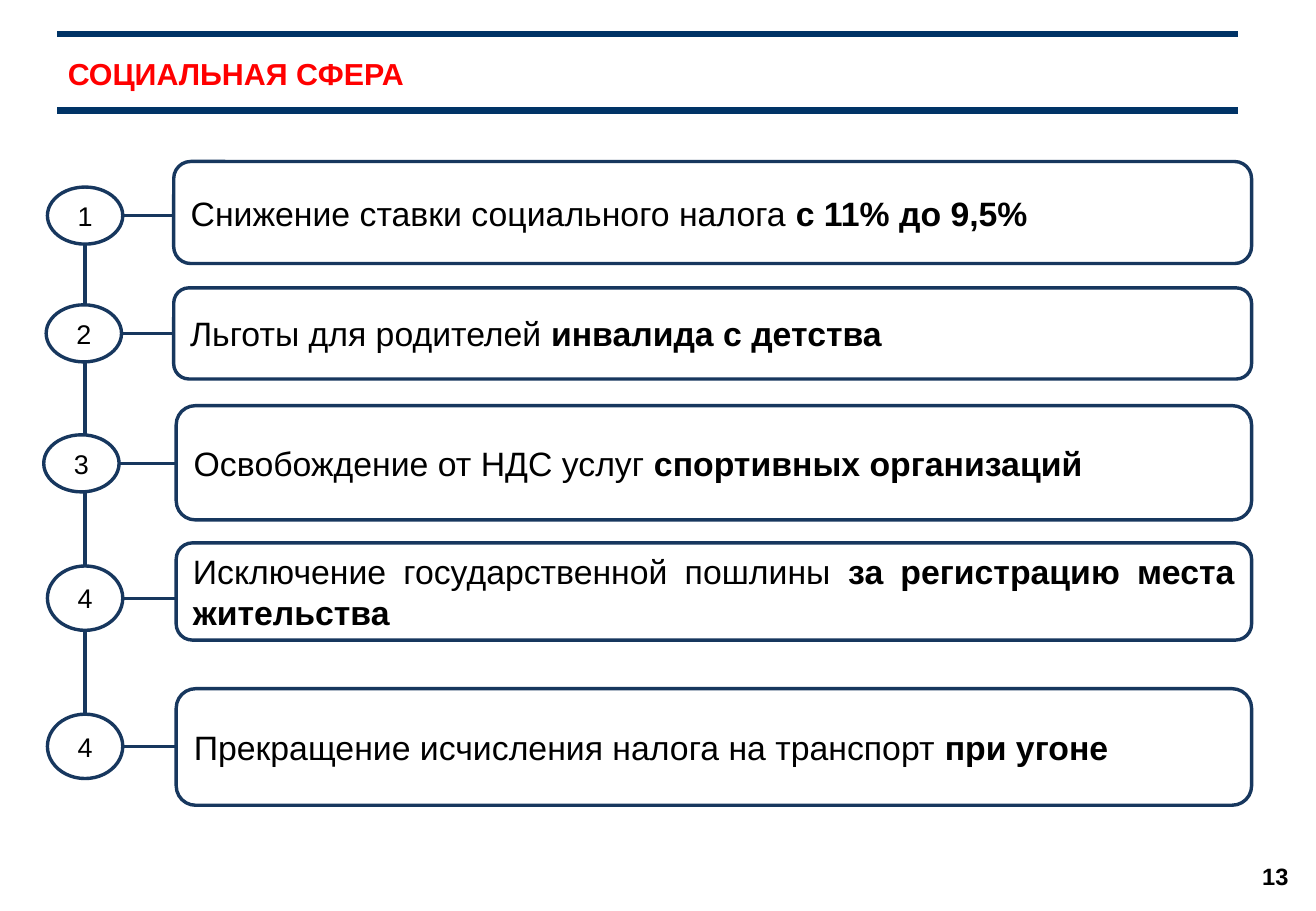
"""Build the social sphere slide with five numbered tax measures."""
import pptx
import pptx.util
import pptx.dml.color
import pptx.enum.shapes
import pptx.enum.text
import pptx.oxml

Inches = pptx.util.Inches
Kind = pptx.enum.shapes.MSO_SHAPE
Align = pptx.enum.text.PP_ALIGN
NAVY = "17375E"


def paint(color, value):
    color.rgb = pptx.dml.color.RGBColor.from_string(value)


def write(shape, parts, size, align, tint="000000"):
    frame = shape.text_frame
    layout = {"word_wrap": True, "vertical_anchor": pptx.enum.text.MSO_ANCHOR.MIDDLE}
    for name, value in layout.items():
        setattr(frame, name, value)
    para = frame.paragraphs[0]
    para.alignment = align
    for text, bold in parts:
        run = para.add_run()
        run.text = text
        style = {"name": "Arial", "size": pptx.util.Pt(size), "bold": bold}
        for name, value in style.items():
            setattr(run.font, name, value)
        paint(run.font.color, tint)


deck = pptx.Presentation()
deck.slide_width, deck.slide_height = Inches(10.83), Inches(7.5)
slide = deck.slides.add_slide(deck.slide_layouts[6])
shapes = slide.shapes

items = [
    ("1", "Снижение ставки социального налога ", "с 11% до 9,5%",
     (1.43, 1.33, 0.84), (0.39, 1.54, 0.47)),
    ("2", "Льготы для родителей ", "инвалида с детства",
     (1.43, 2.37, 0.75), (0.38, 2.51, 0.47)),
    ("3", "Освобождение от НДС услуг ", "спортивных организаций",
     (1.45, 3.34, 0.94), (0.36, 3.58, 0.47)),
    ("4", "Исключение государственной пошлины ", "за регистрацию места жительства",
     (1.45, 4.47, 0.8), (0.39, 4.66, 0.53)),
    ("4", "Прекращение исчисления налога на транспорт ", "при угоне",
     (1.45, 5.67, 0.96), (0.39, 5.88, 0.53)),
]
right, wide = 10.3, 0.62

lines = [
    (0.47, 0.91, 10.19, 0.91, "003366", 4.5),
    (0.47, 0.28, 10.19, 0.28, "003366", 3),
    (0.7, 2.01, 0.7, 5.88, NAVY, 2),
]
for _, _, _, box, oval in items:
    mid = oval[1] + oval[2] / 2
    lines.append((oval[0] + wide, mid, box[0], mid, NAVY, 2))

for x1, y1, x2, y2, tint, width in lines:
    ends = [Inches(value) for value in (x1, y1, x2, y2)]
    line = shapes.add_connector(pptx.enum.shapes.MSO_CONNECTOR.STRAIGHT, *ends)
    line.line.width = pptx.util.Pt(width)
    paint(line.line.color, tint)
    props = line._element.spPr
    props.append(pptx.oxml.parse_xml(
        '<a:effectLst xmlns:a="http://schemas.openxmlformats.org/drawingml/2006/main"/>'))

title = shapes.add_textbox(Inches(0.46), Inches(0.29), Inches(9.77), Inches(0.63))
write(title, [("СОЦИАЛЬНАЯ СФЕРА", True)], 18, Align.LEFT, "FF0000")

page = shapes.add_textbox(Inches(10.17), Inches(6.94), Inches(0.65), Inches(0.55))
write(page, [("13", True)], 14, Align.CENTER)

for label, plain, strong, box, oval in items:
    forms = [
        (Kind.ROUNDED_RECTANGLE, box, right - box[0],
         [(plain, False), (strong, True)], 20, Align.JUSTIFY),
        (Kind.OVAL, oval, wide, [(label, False)], 16, Align.CENTER),
    ]
    for kind, (left, top, height), width, parts, size, align in forms:
        place = [Inches(value) for value in (left, top, width, height)]
        shape = shapes.add_shape(kind, *place)
        shape.shadow.inherit = False
        shape.fill.solid()
        paint(shape.fill.fore_color, "FFFFFF")
        shape.line.width = pptx.util.Pt(2)
        paint(shape.line.color, NAVY)
        write(shape, parts, size, align)

deck.save("out.pptx")
